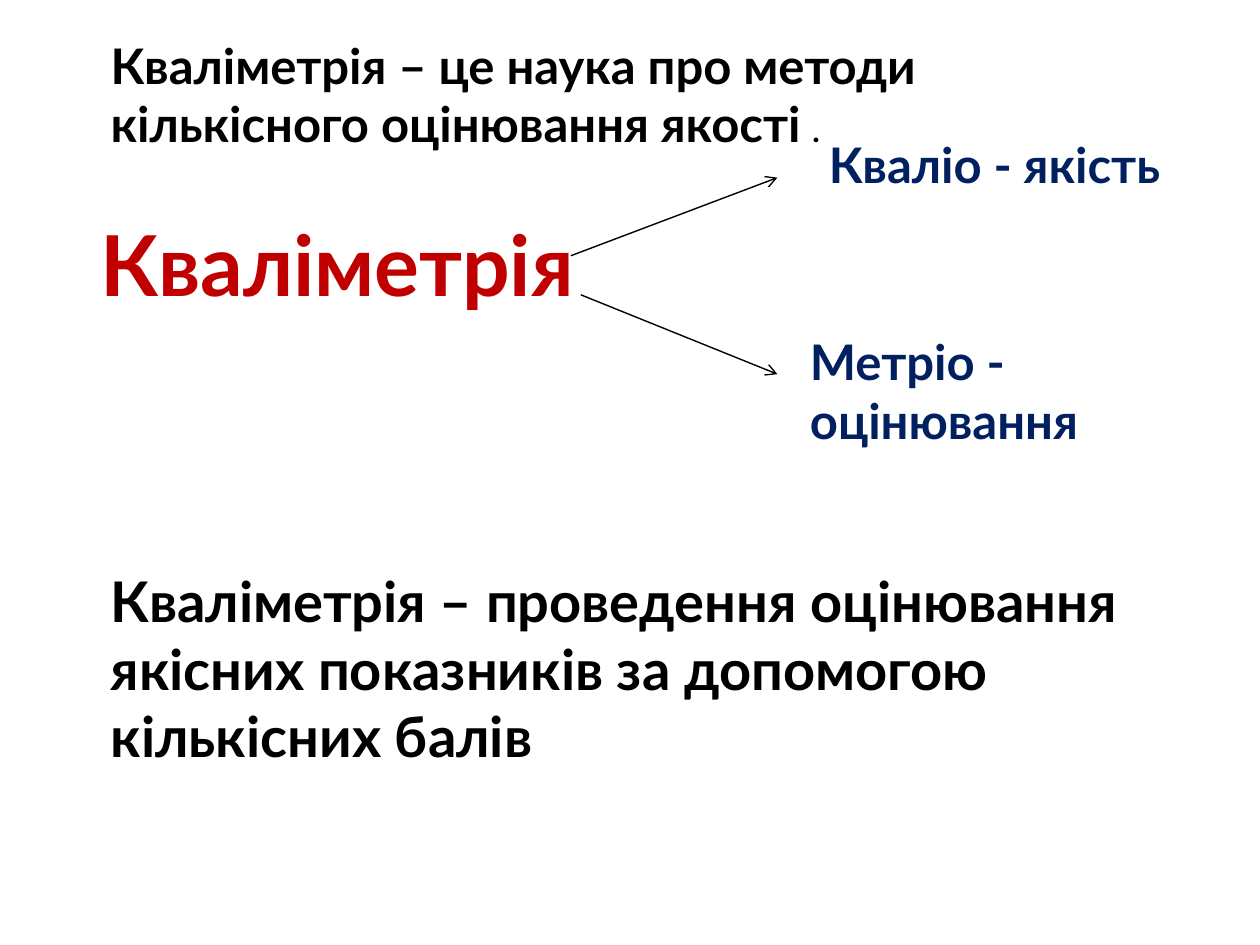
import dataclasses

import pptx
import pptx.dml.color
import pptx.enum.shapes
import pptx.enum.text
import pptx.oxml.ns
import pptx.util
from lxml import etree

Inches = pptx.util.Inches


@dataclasses.dataclass(frozen=True)
class Theme:
    font: str = "Lato"
    ink: str = "000000"
    term: str = "C00000"
    root: str = "002060"
    term_size: int = 48
    summary_size: int = 32
    body_size: int = 28
    small_size: int = 18
    arrow_width: float = 0.79


THEME = Theme()


def rgb(value):
    return pptx.dml.color.RGBColor.from_string(value)


def add_run(p, text, *, size, color=THEME.ink, bold=True):
    r = p.add_run()
    r.text = text
    r.font.name = THEME.font
    r.font.size = pptx.util.Pt(size)
    r.font.bold = bold
    r.font.color.rgb = rgb(color)


def add_text(s, text, left, top, width, height, **style):
    """Add a wrapping text box and return its paragraph."""
    sp = s.shapes.add_textbox(*map(Inches, (left, top, width, height)))
    tf = sp.text_frame
    tf.word_wrap = True
    tf.auto_size = pptx.enum.text.MSO_AUTO_SIZE.SHAPE_TO_FIT_TEXT
    p = tf.paragraphs[0]
    add_run(p, text, **style)
    return p


def add_arrow(s, start, end):
    straight = pptx.enum.shapes.MSO_CONNECTOR.STRAIGHT
    sp = s.shapes.add_connector(straight, *map(Inches, (*start, *end)))
    sp.line.color.rgb = rgb(THEME.ink)
    sp.line.width = pptx.util.Pt(THEME.arrow_width)
    qn = pptx.oxml.ns.qn
    etree.SubElement(sp.line._get_or_add_ln(), qn("a:tailEnd"), type="arrow")
    etree.SubElement(sp._element.spPr, qn("a:effectLst"))


def main():
    prs = pptx.Presentation()
    prs.slide_width, prs.slide_height = Inches(10), Inches(7.5)
    s = prs.slides.add_slide(prs.slide_layouts[6])

    add_text(s, "Кваліметрія", 0.7, 1.64, 7.58, 0.91,
             size=THEME.term_size, color=THEME.term)
    add_arrow(s, (4.53, 2.03), (6.17, 1.41))
    add_arrow(s, (4.61, 2.34), (6.17, 2.97))

    root_style = {"size": THEME.body_size, "color": THEME.root}
    add_text(s, "Кваліо - якість", 6.48, 1.02, 3.05, 0.57, **root_style)
    add_text(s, "Метріо - оцінювання", 6.33, 2.58, 3.36, 1.04, **root_style)

    add_text(s, "Кваліметрія – проведення оцінювання якісних показників "
                "за допомогою кількісних балів",
             0.78, 4.45, 8.59, 1.72, size=THEME.summary_size)
    definition = add_text(
        s, "Кваліметрія – це наука про методи кількісного оцінювання якості ",
        0.78, 0.23, 8.67, 1.04, size=THEME.body_size)
    add_run(definition, ".", size=THEME.small_size)

    prs.save("out.pptx")


if __name__ == "__main__":
    main()
